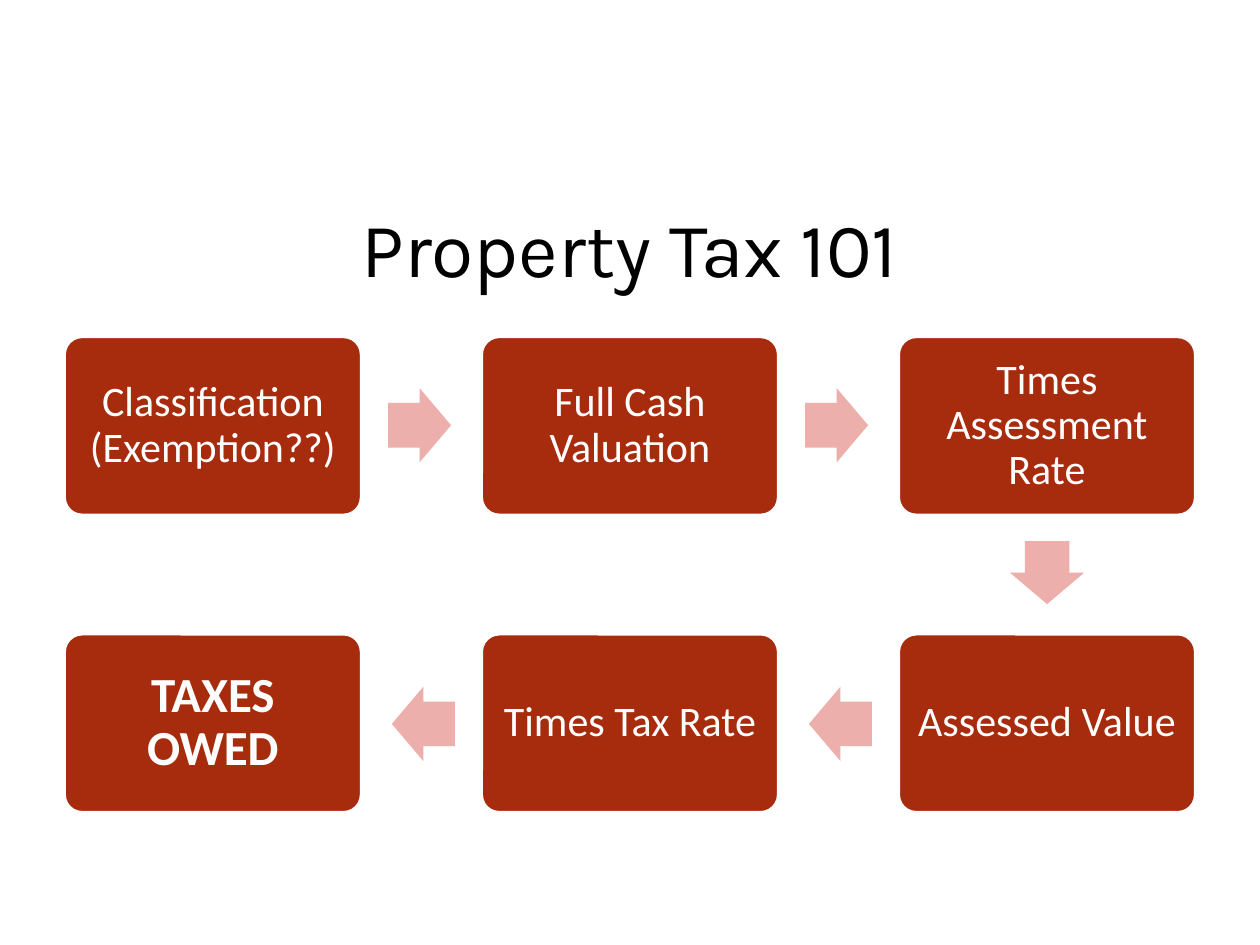
from dataclasses import dataclass

from pptx import Presentation
from pptx.dml.color import RGBColor
from pptx.enum.shapes import MSO_SHAPE
from pptx.enum.text import MSO_ANCHOR, PP_ALIGN
from pptx.util import Pt

PX = 9144  # EMU per px, 100 px to the inch
COLORS = {"box": "A72B0D", "arrow": "ECAFAB", "white": "FFFFFF", "black": "000000"}

COL_X, COL_STEP = 51, 331
ROW_Y, ROW_STEP = 267, 236
BOX_W, BOX_H = 236, 142
ARROW_W, ARROW_H = 50, 59
ARROW_DX = {0: 257, 180: -71, 90: (BOX_W - ARROW_W) // 2}
ARROW_DY = {0: 41, 180: 42, 90: 158}


@dataclass
class Step:
    text: str
    col: int
    row: int
    arrow: int | None  # rotation of the arrow to the next step
    size: int = 24
    bold: bool = False
    inset: int = 10


STEPS = [
    Step("Classification (Exemption??)", 0, 0, 0),
    Step("Full Cash Valuation", 1, 0, 0),
    Step("Times Assessment Rate", 2, 0, 90),
    Step("Assessed Value", 2, 1, 180),
    Step("Times Tax Rate", 1, 1, 180),
    Step("TAXES OWED", 0, 1, None, size=28, bold=True, inset=12),
]


def rgb(name: str) -> RGBColor:
    return RGBColor.from_string(COLORS[name])


def add_preset(s, kind, x: int, y: int, w: int, h: int, fill: str, adjustments):
    sp = s.shapes.add_shape(kind, x * PX, y * PX, w * PX, h * PX)
    sp.shadow.inherit = False
    sp.fill.solid()
    sp.fill.fore_color.rgb = rgb(fill)
    for i, value in enumerate(adjustments):
        sp.adjustments[i] = value
    return sp


def write(sp, text: str, color: str, inset: int, spacing: float, **font) -> None:
    """Centre one paragraph both ways; inset applies to all four sides."""
    tf = sp.text_frame
    tf.word_wrap = True
    tf.vertical_anchor = MSO_ANCHOR.MIDDLE
    for side in ("left", "right", "top", "bottom"):
        setattr(tf, f"margin_{side}", inset * PX)
    p = tf.paragraphs[0]
    p.alignment = PP_ALIGN.CENTER
    p.line_spacing = spacing
    r = p.add_run()
    r.text = text
    r.font.color.rgb = rgb(color)
    for key, value in font.items():
        setattr(r.font, key, value)


def add_step(s, step: Step) -> None:
    x = COL_X + step.col * COL_STEP
    y = ROW_Y + step.row * ROW_STEP
    box = add_preset(s, MSO_SHAPE.ROUNDED_RECTANGLE, x, y, BOX_W, BOX_H, "box", [0.1])
    box.line.color.rgb = rgb("white")
    box.line.width = Pt(2)
    write(box, step.text, "white", step.inset, 0.9,
          name="Calibri", size=Pt(step.size), bold=step.bold)
    if step.arrow is not None:
        arrow = add_preset(s, MSO_SHAPE.RIGHT_ARROW, x + ARROW_DX[step.arrow],
                           y + ARROW_DY[step.arrow], ARROW_W, ARROW_H,
                           "arrow", [0.6, 0.5])
        arrow.line.fill.background()
        arrow.rotation = step.arrow


def main() -> None:
    prs = Presentation()
    prs.slide_width, prs.slide_height = 1000 * PX, 750 * PX
    s = prs.slides.add_slide(prs.slide_layouts[6])
    title = s.shapes.add_textbox(50 * PX, 133 * PX, 900 * PX, 125 * PX)
    write(title, "Property Tax 101", "black", 5, 1.0, name="Karla", size=Pt(44))
    for step in STEPS:
        add_step(s, step)
    prs.save("out.pptx")


if __name__ == "__main__":
    main()
